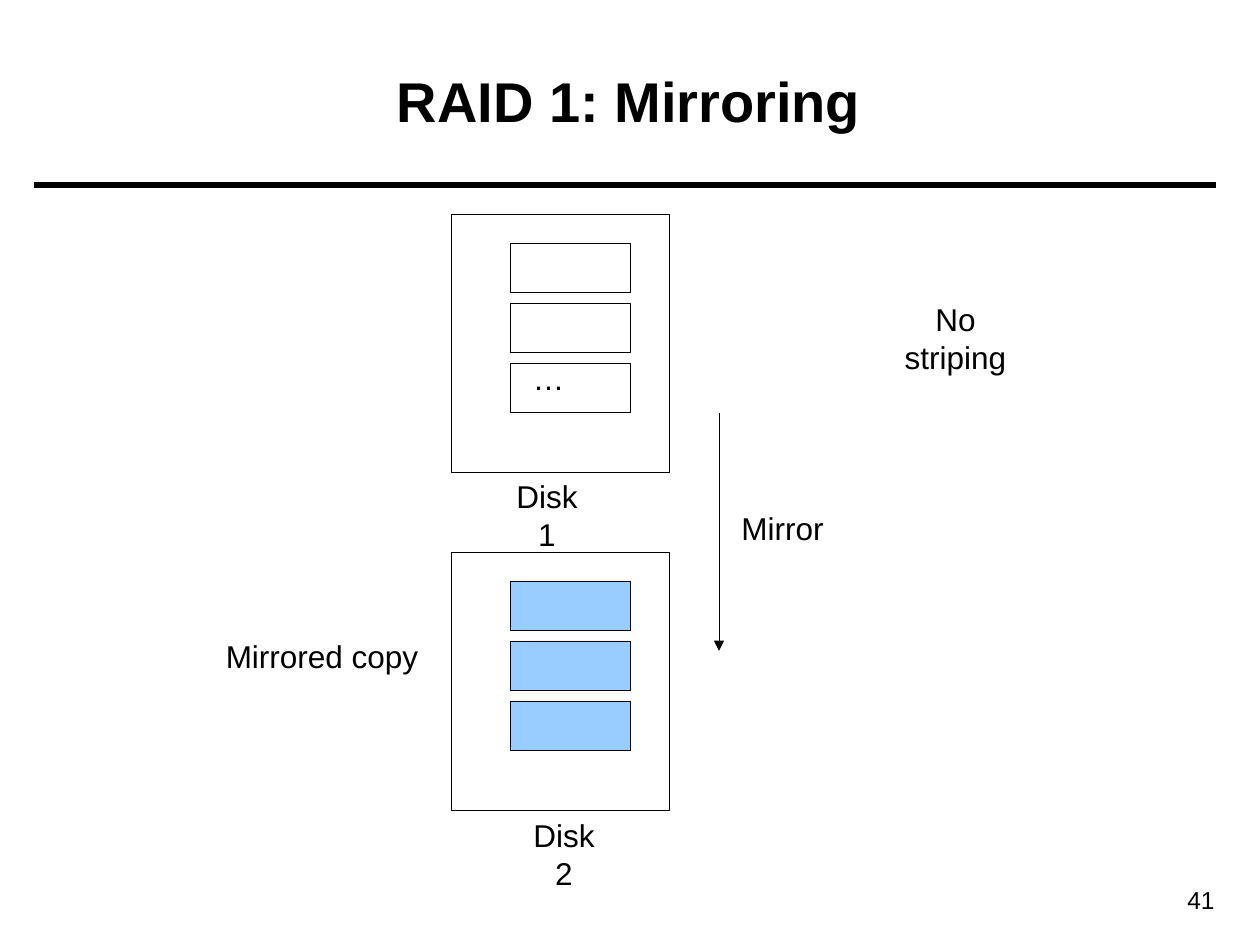
from dataclasses import dataclass

from lxml.etree import SubElement
from pptx import Presentation
from pptx.dml.color import RGBColor
from pptx.enum.shapes import MSO_CONNECTOR, MSO_SHAPE
from pptx.enum.text import MSO_ANCHOR, MSO_AUTO_SIZE, PP_ALIGN
from pptx.oxml.ns import qn
from pptx.util import Emu, Pt

EMU_PER_PX = 914400 / 126


@dataclass(frozen=True)
class Theme:
    font: str = "Arial"
    ink: RGBColor = RGBColor(0x00, 0x00, 0x00)
    mirror_fill: RGBColor = RGBColor(0x99, 0xCC, 0xFF)
    title_size: int = 32
    label_size: int = 18
    number_size: int = 14
    rule_width: float = 3
    thin_width: float = 0.25


THEME = Theme()

DISK_LEFT, DISK_WIDTH, DISK_HEIGHT = 451, 218, 258
BLOCK_LEFT, BLOCK_WIDTH, BLOCK_HEIGHT = 510, 120, 49
BLOCK_OFFSET, BLOCK_STEP, BLOCK_COUNT = 29, 60, 3
LABEL_HEIGHT = 50


def px(length):
    return Emu(round(length * EMU_PER_PX))


def add_text(slide, text, left, top, width, height, size, align, bold=False):
    shape = slide.shapes.add_textbox(px(left), px(top), px(width), px(height))
    frame = shape.text_frame
    frame.word_wrap = True
    paragraph = frame.paragraphs[0]
    paragraph.alignment = align
    run = paragraph.add_run()
    run.text = text
    run.font.name = THEME.font
    run.font.size = Pt(size)
    run.font.bold = bold
    run.font.color.rgb = THEME.ink
    return frame


def add_label(slide, text, left, top, width):
    """Add a one-line label whose box fits its text."""
    frame = add_text(slide, text, left, top, width, LABEL_HEIGHT,
                     THEME.label_size, PP_ALIGN.CENTER)
    frame.word_wrap = False
    frame.auto_size = MSO_AUTO_SIZE.SHAPE_TO_FIT_TEXT


def add_box(slide, left, top, width, height, fill=None):
    shape = slide.shapes.add_shape(MSO_SHAPE.RECTANGLE, px(left), px(top),
                                   px(width), px(height))
    shape.shadow.inherit = False
    if fill is None:
        shape.fill.background()
    else:
        shape.fill.solid()
        shape.fill.fore_color.rgb = fill
    shape.line.color.rgb = THEME.ink
    shape.line.width = Pt(THEME.thin_width)


def add_disk(slide, top, fill=None):
    """Add a disk outline with its column of data blocks."""
    add_box(slide, DISK_LEFT, top, DISK_WIDTH, DISK_HEIGHT)
    for index in range(BLOCK_COUNT):
        block_top = top + BLOCK_OFFSET + index * BLOCK_STEP
        add_box(slide, BLOCK_LEFT, block_top, BLOCK_WIDTH, BLOCK_HEIGHT, fill)


def add_line(slide, start, end, width, arrow=False):
    connector = slide.shapes.add_connector(
        MSO_CONNECTOR.STRAIGHT, *(px(value) for value in (*start, *end)))
    connector.line.color.rgb = THEME.ink
    connector.line.width = Pt(width)
    properties = connector._element.spPr
    if arrow:
        SubElement(properties.find(qn("a:ln")), qn("a:tailEnd"), type="triangle")
    SubElement(properties, qn("a:effectLst"))


def main():
    presentation = Presentation()
    presentation.slide_width = px(1260)
    presentation.slide_height = px(945)
    slide = presentation.slides.add_slide(presentation.slide_layouts[6])

    add_line(slide, (34, 185), (1216, 185), THEME.rule_width)
    add_text(slide, "41", 1096, 879, 131, 43, THEME.number_size, PP_ALIGN.RIGHT)
    title = add_text(slide, "RAID 1: Mirroring", 44, 21, 1170, 158,
                     THEME.title_size, PP_ALIGN.CENTER, bold=True)
    title.vertical_anchor = MSO_ANCHOR.MIDDLE

    add_disk(slide, 214)
    add_disk(slide, 552, THEME.mirror_fill)
    add_line(slide, (719, 413), (719, 651), THEME.thin_width, arrow=True)

    for text, left, top, width in (
        ("Disk 1", 491, 471, 112),
        ("…", 520, 353, 57),
        ("Disk 2", 508, 810, 112),
        ("No striping", 868, 294, 175),
        ("Mirror", 729, 503, 107),
        ("Mirrored copy", 213, 631, 218),
    ):
        add_label(slide, text, left, top, width)

    presentation.save("out.pptx")


if __name__ == "__main__":
    main()
